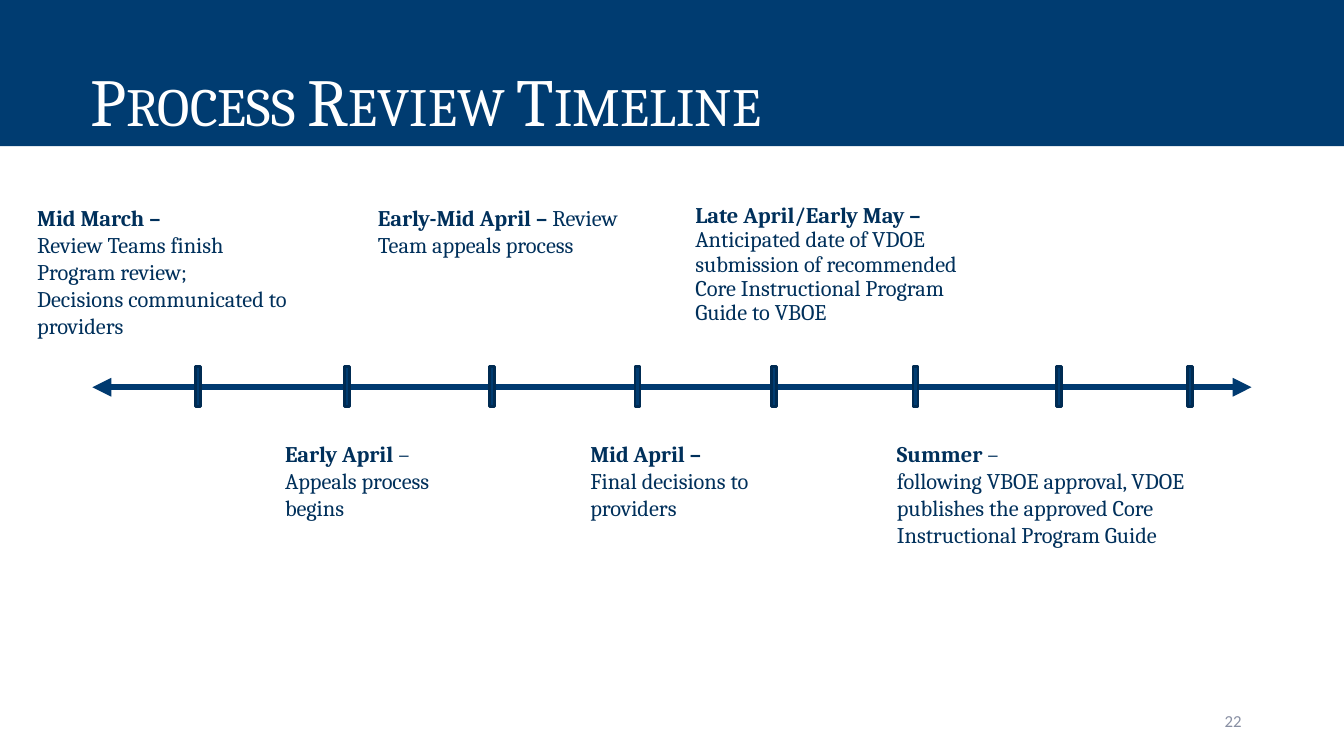
from lxml.etree import SubElement
from pptx import Presentation
from pptx.dml.color import RGBColor
from pptx.enum.shapes import MSO_CONNECTOR as Connector, MSO_SHAPE as Shape
from pptx.enum.text import MSO_ANCHOR as Anchor, MSO_AUTO_SIZE as Fit, PP_ALIGN as Align
from pptx.oxml.ns import qn
from pptx.util import Inches, Pt

COLORS = {"band": "003C71", "axis": "003A70", "edge": "002B52",
          "text": "00305B", "title": "FFFFFF", "page": "888FA3"}
COLUMNS, ROWS = 32, 18
WIDTH, HEIGHT = Inches(40 / 3), Inches(7.5)


def color(name):
    return RGBColor.from_string(COLORS[name])


def apply(target, formats):
    for attribute, value in formats.items():
        setattr(target, attribute, value)


class TimelineSlide:
    """Places elements on a grid of 32 columns and 18 rows."""

    def __init__(self, slide):
        self.shapes = slide.shapes

    def grid(self, *lengths):
        units = (WIDTH / COLUMNS, HEIGHT / ROWS)
        return [round(length * units[i % 2]) for i, length in enumerate(lengths)]

    def rect(self, *place, edge=None):
        rect = self.shapes.add_shape(Shape.RECTANGLE, *self.grid(*place))
        rect.shadow.inherit = False
        rect.fill.solid()
        rect.fill.fore_color.rgb = color("band")
        if edge:
            rect.line.color.rgb = color(edge)
            rect.line.width = Pt(2)
        else:
            rect.line.fill.background()
        return rect

    def axis(self, *ends):
        axis = self.shapes.add_connector(Connector.STRAIGHT, *self.grid(*ends))
        axis.line.color.rgb = color("axis")
        axis.line.width = Pt(4.5)
        line = axis.line._get_or_add_ln()
        for end in ("headEnd", "tailEnd"):
            SubElement(line, qn(f"a:{end}"), type="triangle")
        SubElement(axis._element.spPr, qn("a:effectLst"))

    def fill_text(self, holder, paragraphs, ink="text", font=None, spacing=None, frame=None):
        """Each paragraph is a pair: its bold lead and its plain rest."""
        words = holder.text_frame
        apply(words, {"word_wrap": True, "vertical_anchor": Anchor.TOP, **(frame or {})})
        for i, parts in enumerate(paragraphs):
            paragraph = words.add_paragraph() if i else words.paragraphs[0]
            apply(paragraph, {"alignment": Align.LEFT, **(spacing or {})})
            for bold, part in zip((True, False), parts):
                if part:
                    run = paragraph.add_run()
                    run.text = part
                    apply(run.font, {"name": "Cambria", "size": Pt(16),
                                     "bold": bold, **(font or {})})
                    run.font.color.rgb = color(ink)

    def text(self, place, paragraphs, **style):
        box = self.shapes.add_textbox(*self.grid(*place))
        self.fill_text(box, paragraphs, **style)

    def title(self, heading, *place):
        band = self.rect(*place)
        self.fill_text(band, [("", heading)], ink="title", font={"size": Pt(48)},
                       spacing={"line_spacing": 0.9},
                       frame={"vertical_anchor": Anchor.BOTTOM, "margin_left": Inches(0.9)})
        run = band.text_frame.paragraphs[0].runs[0]
        run.font._element.set("cap", "small")


def main():
    deck = Presentation()
    apply(deck, {"slide_width": WIDTH, "slide_height": HEIGHT})
    page = TimelineSlide(deck.slides.add_slide(deck.slide_layouts[6]))

    # Title band and page number
    page.title("Process Review Timeline", 0, 0, COLUMNS, 3.48)
    page.text((22.6, 16.68, 7.2, 0.96), [("", "22")], ink="page",
              font={"name": "Calibri", "size": Pt(12)}, spacing={"alignment": Align.RIGHT},
              frame={"vertical_anchor": Anchor.MIDDLE})

    # Axis with its ticks
    axis_row, tick_width, tick_height = 9.22, 0.12, 0.96
    page.axis(2.2, axis_row, 29.8, axis_row)
    for tick in (4.72, 8.27, 11.72, 15.18, 18.42, 21.8, 25.21, 28.33):
        page.rect(tick - tick_width / 2, axis_row - tick_height / 2 - 0.01,
                  tick_width, tick_height, edge="edge")

    # Milestones above and below the axis
    above, below = 4.75, 10.37
    tight = {"line_spacing": 0.9, "space_before": Pt(10)}
    milestones = [
        (0.65, above, 7, 3.48, None,
         [("Mid March –", ""), ("", "Review Teams finish"), ("", "Program review; "),
          ("", "Decisions communicated to providers")]),
        (6.55, below, 4.37, 2.83, None,
         [("Early April ", "–Appeals process begins")]),
        (8.76, above, 6.46, 2.83, None,
         [("Early-Mid April – ", "Review Team appeals process ")]),
        (13.82, below, 4.37, 2.83, None,
         [("Mid April –", ""), ("", "Final decisions to providers ")]),
        (16.32, above, 7.63, 4.7, tight,
         [("Late April/Early May –", "Anticipated date of VDOE submission of recommended "
           "Core Instructional Program Guide to VBOE")]),
        (21.12, below, 8.88, 2.83, None,
         [("Summer ", "–"), ("", "following VBOE approval, VDOE publishes the approved "
                             "Core Instructional Program Guide")]),
    ]
    for *place, spacing, paragraphs in milestones:
        page.text(place, paragraphs, spacing=spacing,
                  frame={"auto_size": Fit.SHAPE_TO_FIT_TEXT})

    deck.save("out.pptx")


if __name__ == "__main__":
    main()
